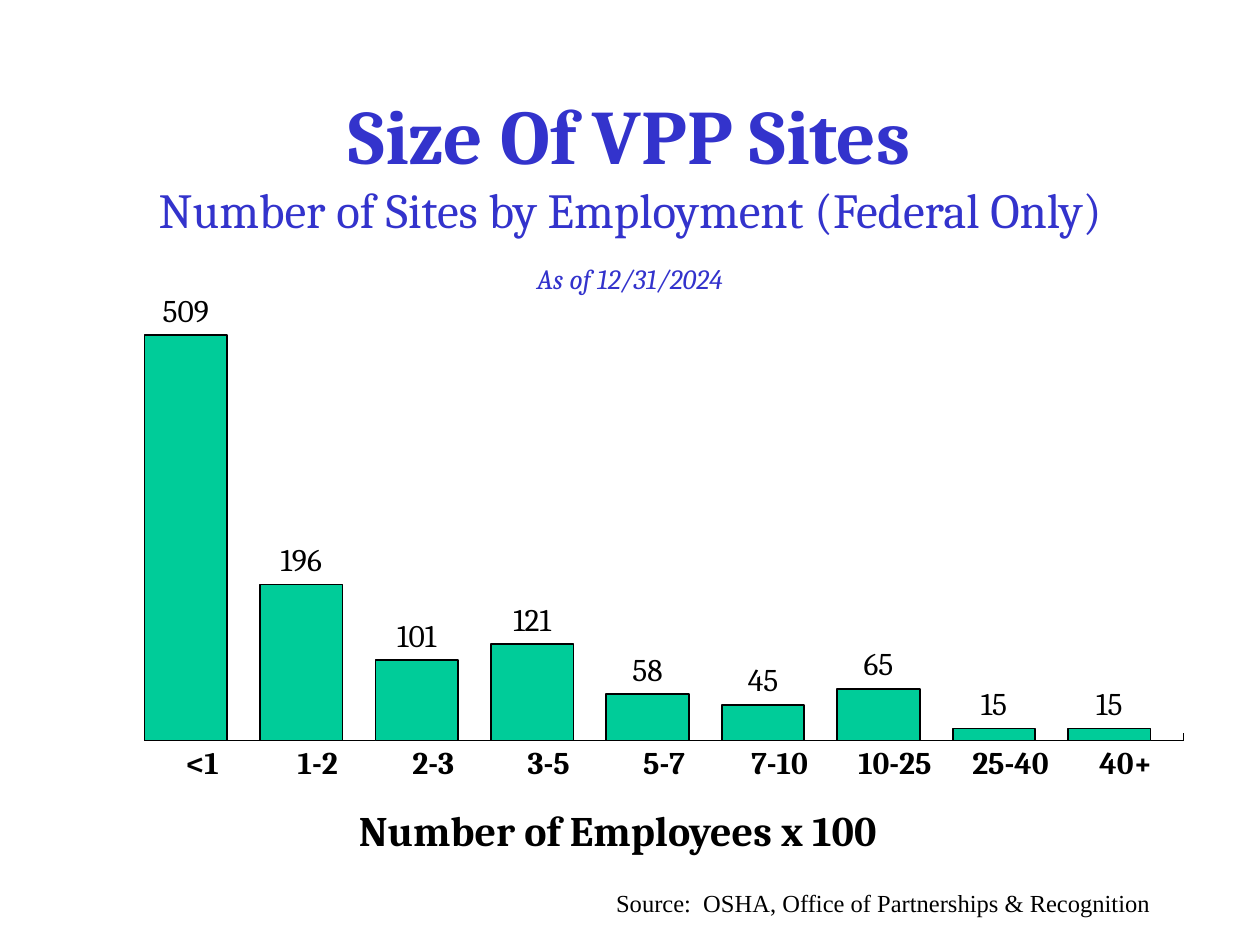
from dataclasses import dataclass

from lxml import etree
from pptx import Presentation
from pptx import util as u
from pptx.chart import data as chart_data
from pptx.dml.color import RGBColor
from pptx.enum import chart as ch, text as t
from pptx.oxml import ns


@dataclass(frozen=True)
class Theme:
    ink: str = "000000"
    heading: str = "3333CC"
    bars: tuple = ("00CC99", "3333CC", "CCCCFF")
    serif: str = "Cambria"
    plain: str = "Times New Roman"
    title: int = 44
    subtitle: int = 28
    caption: int = 24
    chart: int = 18
    date: int = 16
    source: int = 14


def style_font(font, size, face, color, bold=False, italic=False):
    font.size, font.name = u.Pt(size), face
    font.bold, font.italic = bold, italic
    font.color.rgb = RGBColor.from_string(color)


def add_span(para, content, **style):
    span = para.add_run()
    span.text = content
    style_font(span.font, **style)


class Page:
    columns, rows = 120, 90

    def __init__(self, deck, theme):
        self.deck, self.theme = deck, theme
        self.slide = deck.slides.add_slide(deck.slide_layouts[6])

    def place(self, left, top, width, height):
        column = self.deck.slide_width / self.columns
        row = self.deck.slide_height / self.rows
        return [round(n) for n in (left * column, top * row, width * column, height * row)]

    def text(self, area, *lines, centred=False, wrap=True):
        frame = self.slide.shapes.add_textbox(*self.place(*area)).text_frame
        frame.word_wrap = wrap
        frame.auto_size = t.MSO_AUTO_SIZE.NONE if centred else t.MSO_AUTO_SIZE.SHAPE_TO_FIT_TEXT
        frame.vertical_anchor = t.MSO_ANCHOR.MIDDLE if centred else t.MSO_ANCHOR.TOP
        para = frame.paragraphs[0]
        para.alignment = t.PP_ALIGN.CENTER if centred else t.PP_ALIGN.LEFT
        for index, (content, style) in enumerate(lines):
            if index:
                para.add_line_break()
            add_span(para, content, **style)

    def column_chart(self, area, categories, series, maximum, plot_area):
        data = chart_data.CategoryChartData()
        data.categories = categories
        for name, values in series.items():
            data.add_series(name, values)
        chart = self.slide.shapes.add_chart(
            ch.XL_CHART_TYPE.COLUMN_CLUSTERED, *self.place(*area), data).chart
        chart.has_legend = chart.has_title = False
        style = dict(size=self.theme.chart, face=self.theme.serif, color=self.theme.ink)
        style_font(chart.font, bold=True, **style)
        self.style_axes(chart, maximum)
        plot = chart.plots[0]
        plot.gap_width, plot.overlap, plot.vary_by_categories = 0, 80, False
        for bars, color in zip(plot.series, self.theme.bars):
            bars.format.fill.solid()
            bars.format.fill.fore_color.rgb = RGBColor.from_string(color)
            self.style_line(bars.format.line, 1)
        labels = plot.series[0].data_labels
        labels.show_value = True
        labels.position = ch.XL_LABEL_POSITION.OUTSIDE_END
        style_font(labels.font, **style)
        self.fix_plot_area(chart, plot_area)

    def style_line(self, line, width):
        line.color.rgb = RGBColor.from_string(self.theme.ink)
        line.width = u.Pt(width)

    def style_axes(self, chart, maximum):
        names, values = chart.category_axis, chart.value_axis
        names.major_tick_mark = ch.XL_TICK_MARK.INSIDE
        self.style_line(names.format.line, 0.25)
        values.minimum_scale, values.maximum_scale = 0, maximum
        values.has_major_gridlines = False
        values.major_tick_mark = ch.XL_TICK_MARK.NONE
        values.tick_label_position = ch.XL_TICK_LABEL_POSITION.NONE
        values.format.line.fill.background()

    def fix_plot_area(self, chart, plot_area):
        area = chart.element.find(".//" + ns.qn("c:plotArea"))
        layout = area.find(ns.qn("c:layout"))
        if layout is None:
            layout = etree.Element(ns.qn("c:layout"))
            area.insert(0, layout)
        manual = etree.SubElement(layout, ns.qn("c:manualLayout"))
        settings = dict(layoutTarget="inner", xMode="edge", yMode="edge",
                        **dict(zip("xywh", plot_area)))
        for name, value in settings.items():
            etree.SubElement(manual, ns.qn("c:" + name)).set("val", str(value))


def main():
    deck = Presentation()
    deck.slide_width, deck.slide_height = u.Inches(10), u.Inches(7.5)
    theme = Theme()
    page = Page(deck, theme)
    heading = dict(face=theme.serif, color=theme.heading)

    categories = ["<1", "1-2", "2-3", "3-5", "5-7", "7-10", "10-25", "25-40", "40+"]
    empty = [None] * len(categories)
    series = {"Series 1": [509, 196, 101, 121, 58, 45, 65, 15, 15],
              "Series 2": empty, "Series 3": empty}
    page.column_chart((11.75, 25, 101, 51.75), categories, series,
                      maximum=600, plot_area=(0.02, 0, 0.98, 0.88))

    page.text((9, 8, 102, 15),
              ("Size Of VPP Sites", dict(size=theme.title, bold=True, **heading)),
              ("Number of Sites by Employment (Federal Only)",
               dict(size=theme.subtitle, **heading)), centred=True)
    page.text((43, 22, 34, 9),
              ("As of 12/31/2024", dict(size=theme.date, italic=True, **heading)),
              centred=True)
    page.text((33, 76, 55, 6),
              ("Number of Employees x 100",
               dict(size=theme.caption, face=theme.serif, color=theme.ink, bold=True)),
              wrap=False)
    page.text((57.5, 84, 61.5, 4),
              ("Source:  OSHA, Office of Partnerships & Recognition",
               dict(size=theme.source, face=theme.plain, color=theme.ink)))
    deck.save("out.pptx")


if __name__ == "__main__":
    main()
